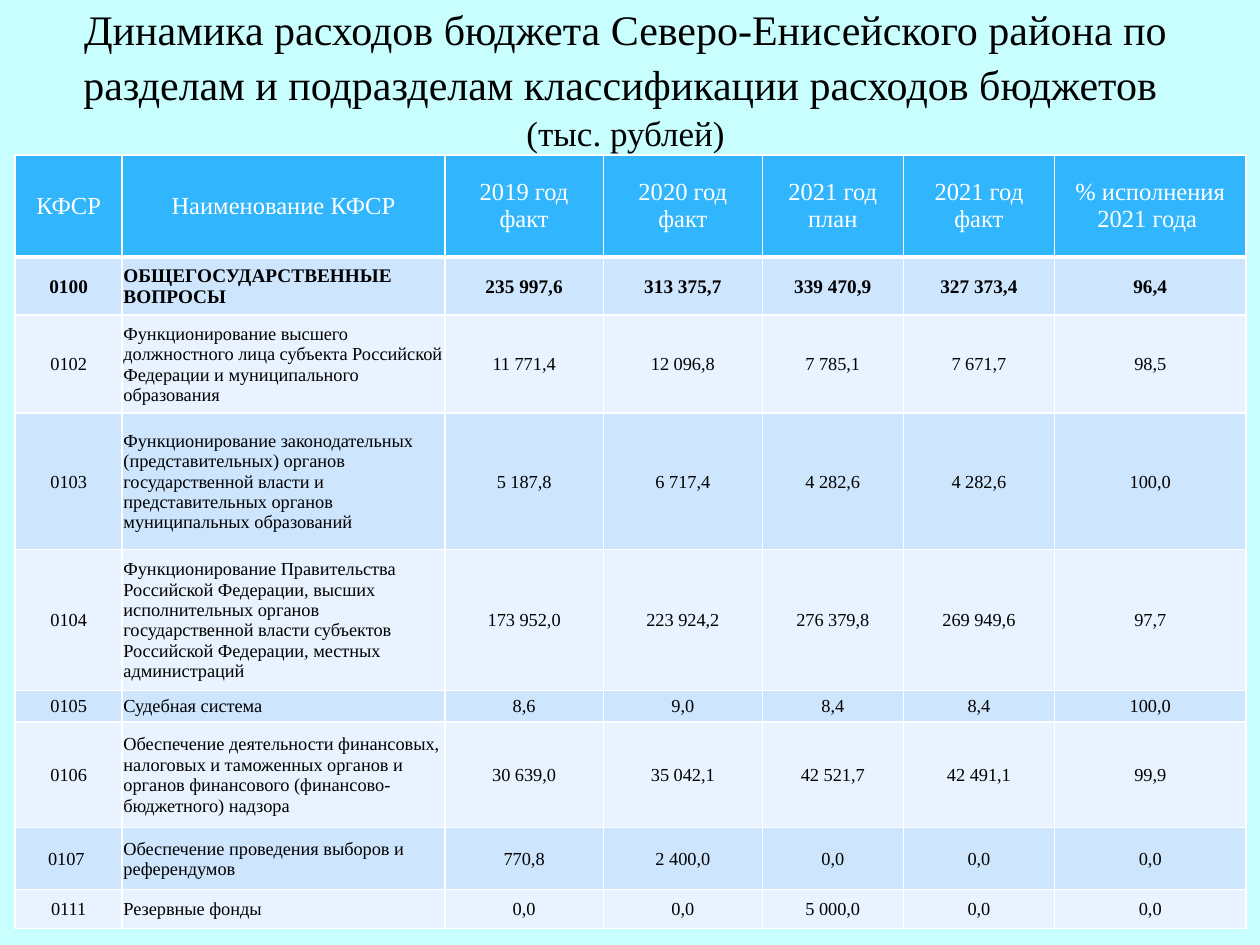
from lxml import etree
from pptx import Presentation
from pptx.dml.color import RGBColor
from pptx.enum import text
from pptx.oxml import ns
from pptx.util import Inches, Pt

FONT = "Times New Roman"
BLACK = RGBColor(0x00, 0x00, 0x00)
WHITE = RGBColor(0xFF, 0xFF, 0xFF)
BACKGROUND = RGBColor(0xC8, 0xFE, 0xFD)
HEADER_FILL = RGBColor(0x31, 0xB6, 0xFD)
BAND_FILLS = (RGBColor(0xCE, 0xE5, 0xFE), RGBColor(0xE8, 0xF3, 0xFF))

TITLE = ("Динамика расходов бюджета Северо-Енисейского района по "
         "разделам и подразделам классификации расходов бюджетов ")
COLUMN_WIDTHS = (0.85, 2.56, 1.26, 1.26, 1.12, 1.2, 1.52)
ROW_HEIGHTS = (0.81, 0.46, 0.78, 1.08, 1.12, 0.25, 0.84, 0.49, 0.31)
NAME_COLUMN = 1
HEADER = ("КФСР", "Наименование КФСР", "2019 год факт", "2020 год факт",
          "2021 год план", "2021 год факт", "% исполнения\n2021 года ")
EXPENSES = (
    ("0100", "ОБЩЕГОСУДАРСТВЕННЫЕ ВОПРОСЫ",
     "235 997,6", "313 375,7", "339 470,9", "327 373,4", "96,4"),
    ("0102", "Функционирование высшего должностного лица субъекта "
     "Российской Федерации и муниципального образования",
     "11 771,4", "12 096,8", "7 785,1", "7 671,7", "98,5"),
    ("0103", "Функционирование законодательных (представительных) органов "
     "государственной власти и представительных органов "
     "муниципальных образований",
     "5 187,8", "6 717,4", "4 282,6", "4 282,6", "100,0"),
    ("0104", "Функционирование Правительства Российской Федерации, высших "
     "исполнительных органов государственной власти субъектов "
     "Российской Федерации, местных администраций",
     "173 952,0", "223 924,2", "276 379,8", "269 949,6", "97,7"),
    ("0105", "Судебная система", "8,6", "9,0", "8,4", "8,4", "100,0"),
    ("0106", "Обеспечение деятельности финансовых, налоговых и таможенных "
     "органов и органов финансового (финансово-бюджетного) надзора",
     "30 639,0", "35 042,1", "42 521,7", "42 491,1", "99,9"),
    ("0107 ", "Обеспечение проведения выборов и референдумов",
     "770,8", "2 400,0", "0,0", "0,0", "0,0"),
    ("0111", "Резервные фонды", "0,0", "0,0", "5 000,0", "0,0", "0,0"),
)


def add_span(para, words, *, size, color=BLACK, bold=False):
    """Append a formatted run to a paragraph."""
    span = para.add_run()
    span.text = words
    span.font.name = FONT
    span.font.size = Pt(size)
    span.font.bold = bold
    span.font.color.rgb = color


def add_title(page):
    """Add the centred heading with its smaller unit line."""
    box = page.shapes.add_textbox(Inches(0.12), Inches(0.05), Inches(9.69), Inches(1.12))
    frame = box.text_frame
    frame.word_wrap = True
    frame.vertical_anchor = text.MSO_ANCHOR.MIDDLE
    para = frame.paragraphs[0]
    para.alignment = text.PP_ALIGN.CENTER
    para.line_spacing = 1.08
    add_span(para, TITLE, size=24)
    para.add_line_break()
    add_span(para, "(тыс. рублей)", size=20)


def set_borders(cell, *, bottom=1):
    """Draw white lines on all four sides of a cell."""
    properties = cell._tc.get_or_add_tcPr()
    for side, width in (("L", 1), ("R", 1), ("T", 1), ("B", bottom)):
        line = etree.SubElement(properties, ns.qn(f"a:ln{side}"), w=str(Pt(width)))
        fill = etree.SubElement(line, ns.qn("a:solidFill"))
        etree.SubElement(fill, ns.qn("a:srgbClr"), val=str(WHITE))


def fill_cell(cell, words, *, fill, align=text.PP_ALIGN.CENTER, bottom=1, **font):
    """Write and format one table cell."""
    set_borders(cell, bottom=bottom)
    cell.fill.solid()
    cell.fill.fore_color.rgb = fill
    cell.vertical_anchor = text.MSO_ANCHOR.MIDDLE
    frame = cell.text_frame
    for index, line in enumerate(words.split("\n")):
        para = frame.add_paragraph() if index else frame.paragraphs[0]
        para.alignment = align
        add_span(para, line, **font)


def add_expense_table(page):
    """Add the table of expenses by budget section."""
    table = page.shapes.add_table(
        len(ROW_HEIGHTS), len(COLUMN_WIDTHS), Inches(0.12), Inches(1.23),
        Inches(sum(COLUMN_WIDTHS)), Inches(sum(ROW_HEIGHTS))).table
    for column, width in zip(table.columns, COLUMN_WIDTHS):
        column.width = Inches(width)
    for row, height in zip(table.rows, ROW_HEIGHTS):
        row.height = Inches(height)
    for cell, words in zip(table.rows[0].cells, HEADER):
        fill_cell(cell, words, fill=HEADER_FILL, bottom=3, size=14, color=WHITE)
    for number, expense in enumerate(EXPENSES):
        total = number == 0
        for column, words in enumerate(expense):
            cell = table.cell(number + 1, column)
            cell.margin_left = cell.margin_top = cell.margin_right = Inches(0.01)
            cell.margin_bottom = 0
            named = column == NAME_COLUMN
            fill_cell(cell, words, fill=BAND_FILLS[number % 2],
                      align=text.PP_ALIGN.LEFT if named else text.PP_ALIGN.CENTER,
                      size=11 if total else 10.5, bold=total)


def main():
    """Build the budget slide and save it."""
    deck = Presentation()
    deck.slide_width, deck.slide_height = Inches(10), Inches(7.5)
    page = deck.slides.add_slide(deck.slide_layouts[6])
    page.background.fill.solid()
    page.background.fill.fore_color.rgb = BACKGROUND
    add_title(page)
    add_expense_table(page)
    deck.save("out.pptx")


if __name__ == "__main__":
    main()
